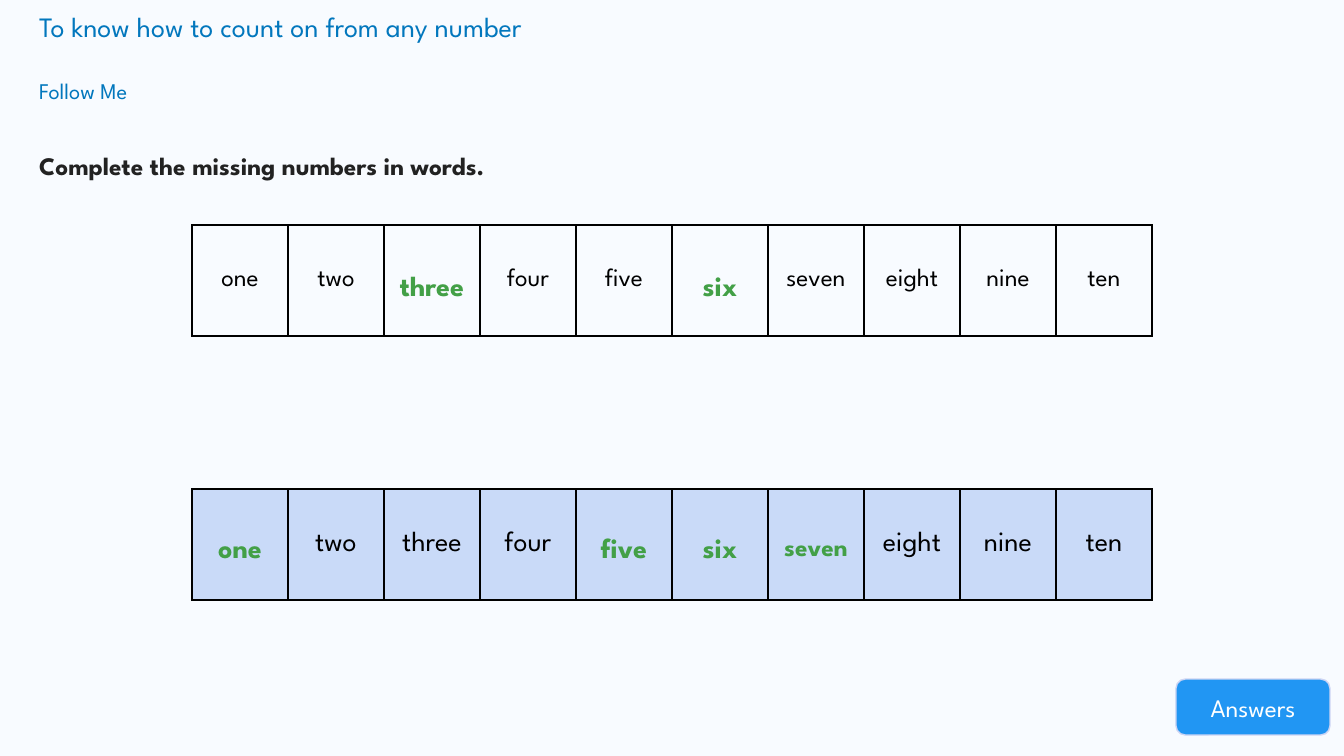
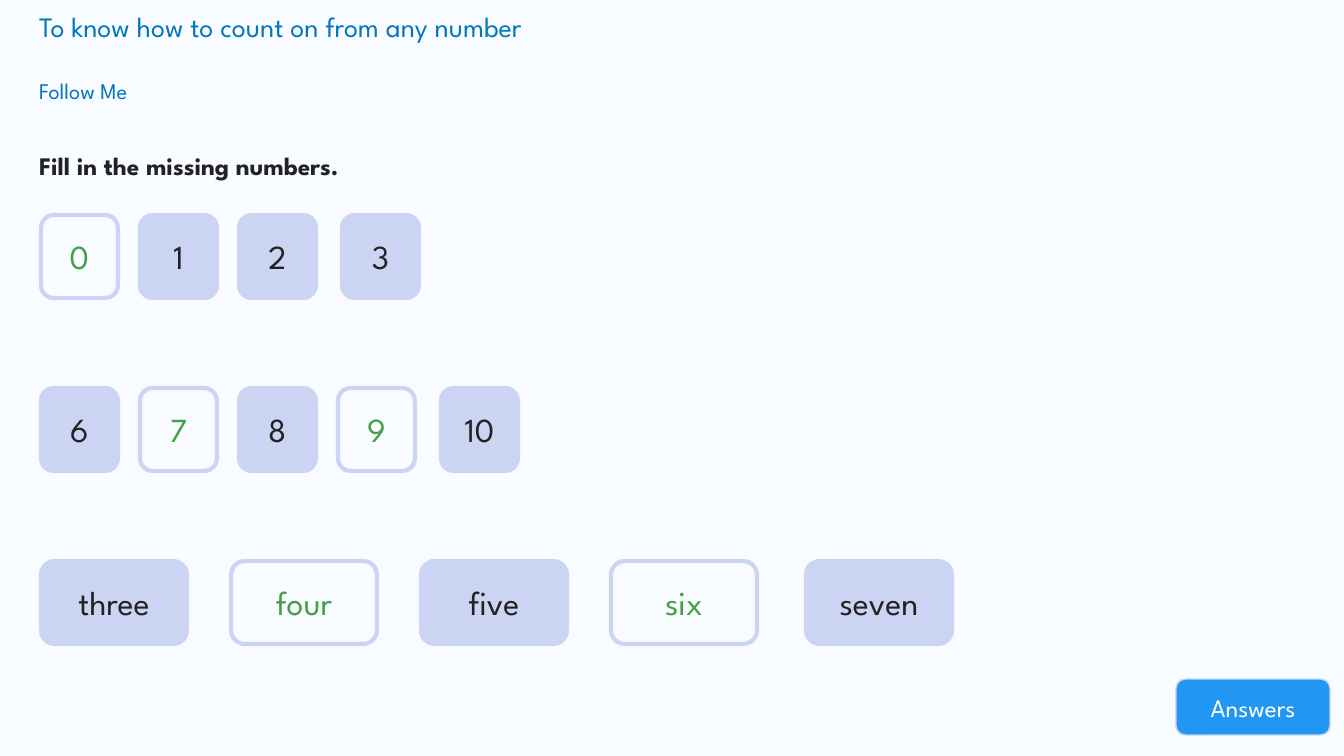
import pptx
import pptx.dml.color
import pptx.enum.shapes
import pptx.enum.text
import pptx.oxml
import pptx.oxml.ns
import pptx.util
import lxml.etree

PX = 12192000 / 1344
FONT = "League Spartan"
COLOURS = {
    "page": "F8FBFF",
    "heading": "0277BD",
    "ink": "222222",
    "black": "000000",
    "white": "FFFFFF",
    "answer": "43A047",
    "tile": "CCD4F4",
    "strip": "C9DAF8",
    "button": "2196F3",
}
RGB = {name: pptx.dml.color.RGBColor.from_string(code) for name, code in COLOURS.items()}
ANCHOR = pptx.enum.text.MSO_ANCHOR
ALIGN = pptx.enum.text.PP_ALIGN
QN = pptx.oxml.ns.qn


def write(frame, text, size, colour, bold=False, align=ALIGN.CENTER, anchor=ANCHOR.MIDDLE):
    """Put one formatted run into a frame and return its paragraph."""
    frame.word_wrap = True
    frame.vertical_anchor = anchor
    paragraph = frame.paragraphs[0]
    paragraph.alignment = align
    run = paragraph.add_run()
    run.text = text
    run.font.name = FONT
    run.font.size = pptx.util.Pt(size)
    run.font.bold = bold
    run.font.color.rgb = RGB[colour]
    return paragraph


def add_rounded(slide, box, fill, line_width, text, size, colour):
    shape = slide.shapes.add_shape(
        pptx.enum.shapes.MSO_SHAPE.ROUNDED_RECTANGLE, *[round(v * PX) for v in box])
    shape.shadow.inherit = False
    if fill:
        shape.fill.solid()
        shape.fill.fore_color.rgb = RGB[fill]
    else:
        shape.fill.background()
    shape.line.color.rgb = RGB["tile"]
    shape.line.width = pptx.util.Pt(line_width)
    write(shape.text_frame, text, size, colour)


prs = pptx.Presentation()
prs.slide_width = round(1344 * PX)
prs.slide_height = round(756 * PX)
background = prs.slide_master.background.fill
background.solid()
background.fore_color.rgb = RGB["page"]

# Shared frame: title, section and instruction, then the button
layout = prs.slide_layouts[3]
heading_boxes = {0: (29, 4, 1244, 44), 1: (29, 72, 299, 46), 2: (29, 130, 1294, 56)}
for placeholder in layout.placeholders:
    idx = placeholder.placeholder_format.idx
    if idx in heading_boxes:
        (placeholder.left, placeholder.top,
         placeholder.width, placeholder.height) = [round(v * PX) for v in heading_boxes[idx]]

slides = []
for instruction in ("Complete the missing numbers in words.", "Fill in the missing numbers."):
    slide = prs.slides.add_slide(layout)
    headings = (
        (0, "To know how to count on from any number", 20, "heading", False, 1),
        (1, "Follow Me", 16, "heading", False, 1),
        (2, instruction, 18, "ink", True, 1.5),
    )
    for idx, text, size, colour, bold, spacing in headings:
        frame = slide.placeholders[idx].text_frame
        frame.auto_size = pptx.enum.text.MSO_AUTO_SIZE.NONE
        paragraph = write(frame, text, size, colour, bold, ALIGN.LEFT, ANCHOR.TOP)
        properties = paragraph._p.get_or_add_pPr()
        properties.set("marL", "0")
        properties.set("indent", "0")
        lxml.etree.SubElement(properties, QN("a:buNone"))
        paragraph.space_before = pptx.util.Pt(0)
        paragraph.line_spacing = spacing
    add_rounded(slide, (1176, 679, 154, 56), "button", 1, "Answers", 18, "white")
    slides.append(slide)
words_slide, tiles_slide = slides

# Number words one to ten, with the missing ones laid over empty cells
NUMBER_WORDS = "one two three four five six seven eight nine ten".split()
STRIP_LEFT, CELL_WIDTH, CELL_HEIGHT = 192, 96, 111
strips = (
    (225, 4, None, 18, {"three": 20, "six": 20}),
    (489, 2, "strip", 20, {"one": 20, "five": 20, "six": 20, "seven": 18}),
)
for top, answer_drop, fill, size, answers in strips:
    strip = words_slide.shapes.add_table(
        1, len(NUMBER_WORDS), round(STRIP_LEFT * PX), round(top * PX),
        round(CELL_WIDTH * len(NUMBER_WORDS) * PX), round(CELL_HEIGHT * PX)).table
    strip.first_row = False
    strip.horz_banding = False
    for column, word in enumerate(NUMBER_WORDS):
        cell = strip.cell(0, column)
        if fill:
            cell.fill.solid()
            cell.fill.fore_color.rgb = RGB[fill]
        else:
            cell.fill.background()
        for position, side in enumerate(("lnL", "lnR", "lnT", "lnB")):
            border = pptx.oxml.parse_xml(
                f'<a:{side} xmlns:a="http://schemas.openxmlformats.org/drawingml/2006/main" '
                f'w="12700"><a:solidFill><a:srgbClr val="{COLOURS["black"]}"/>'
                f'</a:solidFill></a:{side}>')
            cell._tc.get_or_add_tcPr().insert(position, border)
        if word not in answers:
            cell.vertical_anchor = ANCHOR.MIDDLE
            write(cell.text_frame, word, size, "black")
            continue
        answer = words_slide.shapes.add_textbox(
            round((STRIP_LEFT + CELL_WIDTH * column) * PX), round((top + answer_drop) * PX),
            round(CELL_WIDTH * PX), round(107 * PX)).text_frame
        answer.margin_top = answer.margin_bottom = round(10 * PX)
        write(answer, word, answers[word], "answer", True).line_spacing = 1.15

# Number tiles: missing numbers are outlined, the last tile stands a little apart
TILE_LEFT, TILE_TOP, TILE_HEIGHT, ROW_PITCH = 41, 215, 83, 173
tile_rows = (
    (77, 99, 4, ("0", "1", "2", "3"), ("0",)),
    (77, 99, 4, ("6", "7", "8", "9", "10"), ("7", "9")),
    (146, 190, 5, ("three", "four", "five", "six", "seven"), ("four", "six")),
)
for row, (width, pitch, last_shift, numbers, missing) in enumerate(tile_rows):
    for column, number in enumerate(numbers):
        left = TILE_LEFT + pitch * column
        if column == len(numbers) - 1:
            left += last_shift
        fill, colour = (None, "answer") if number in missing else ("tile", "ink")
        box = (left, TILE_TOP + ROW_PITCH * row, width, TILE_HEIGHT)
        add_rounded(tiles_slide, box, fill, 3, number, 24, colour)

prs.save("out.pptx")
